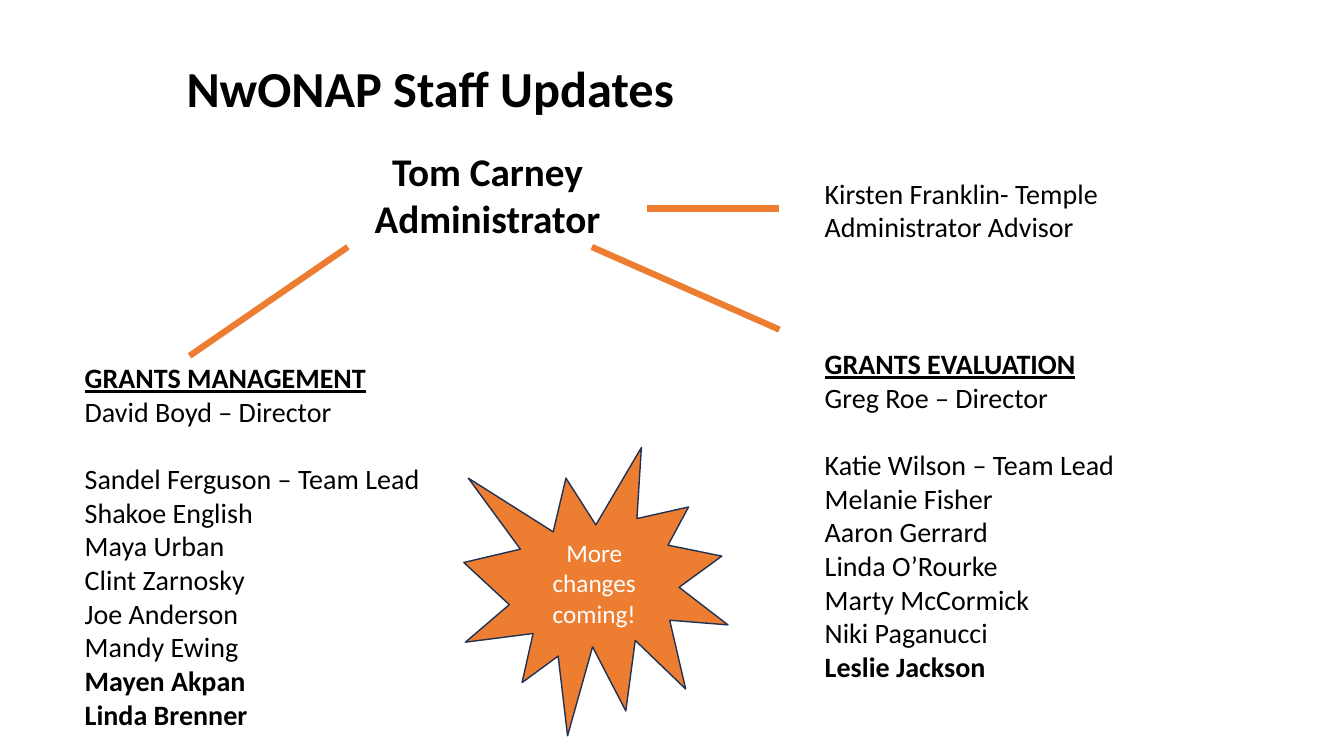
from lxml.etree import SubElement
from pptx import Presentation
from pptx.dml.color import RGBColor
from pptx.enum.shapes import MSO_CONNECTOR, MSO_SHAPE
from pptx.enum.text import MSO_ANCHOR, MSO_AUTO_SIZE, PP_ALIGN
from pptx.oxml.ns import qn
from pptx.util import Pt

PX = 9144  # 100 px to the inch
FONT = "Calibri"
BLACK = RGBColor(0, 0, 0)
WHITE = RGBColor(255, 255, 255)
ORANGE = RGBColor(0xED, 0x7D, 0x31)
NAVY = RGBColor(0x1E, 0x32, 0x56)

TITLE = (175, 52, 511, 71)
BOSS = (360, 141, 247, 104)
AIDE = (808, 170, 294, 77)
LEFT = (74, 353, 355, 380)
RIGHT = (808, 339, 310, 347)
BURST = (460, 444, 262, 286)
LINKS = [(345, 245, 188, 353), (587, 245, 773, 327), (642, 207, 773, 207)]

# Each team: heading, director, staff, newly joined staff
GRANTS = ("GRANTS MANAGEMENT", "David Boyd – Director",
          ["Sandel Ferguson – Team Lead", "Shakoe English", "Maya Urban",
           "Clint Zarnosky", "Joe Anderson", "Mandy Ewing"],
          ["Mayen Akpan", "Linda Brenner"])
REVIEW = ("GRANTS EVALUATION", "Greg Roe – Director",
          ["Katie Wilson – Team Lead", "Melanie Fisher", "Aaron Gerrard",
           "Linda O’Rourke", "Marty McCormick", "Niki Paganucci"],
          ["Leslie Jackson"])


def scale(box):
    return [v * PX for v in box]


def place(shape, box):
    shape.left, shape.top, shape.width, shape.height = scale(box)


def write(shape, text, size, bold=False, color=BLACK,
          align=PP_ALIGN.LEFT, anchor=MSO_ANCHOR.TOP):
    frame = shape.text_frame
    frame.text = text
    frame.word_wrap = True
    frame.auto_size = MSO_AUTO_SIZE.NONE
    frame.vertical_anchor = anchor
    for para in frame.paragraphs:
        para.alignment = align
        para.space_before = Pt(0)
        for run in para.runs:
            font = run.font
            font.name, font.size, font.bold = FONT, Pt(size), bold
            font.color.rgb = color
    return frame.paragraphs


def add_label(slide, box, text, size, **style):
    write(slide.shapes.add_textbox(*scale(box)), text, size, **style)


def add_team(holder, box, team):
    head, chief, staff, fresh = team
    place(holder, box)
    paras = write(holder, "\n".join([head, chief, *staff, *fresh]), 20)
    for para in paras:
        props = para._p.get_or_add_pPr()
        props.set("marL", "0")
        props.set("indent", "0")
        SubElement(props, qn("a:buNone"))
    paras[0].runs[0].font.underline = True
    paras[1].space_after = Pt(24)
    for para in (paras[0], *paras[-len(fresh):]):
        para.runs[0].font.bold = True


def add_link(slide, ends):
    link = slide.shapes.add_connector(MSO_CONNECTOR.STRAIGHT, *scale(ends))
    link.line.color.rgb = ORANGE
    link.line.width = Pt(4.5)
    SubElement(link._element.spPr, qn("a:effectLst"))


def add_burst(slide, box, text):
    burst = slide.shapes.add_shape(MSO_SHAPE.EXPLOSION1, *scale(box))
    burst.shadow.inherit = False
    burst.fill.solid()
    burst.fill.fore_color.rgb = ORANGE
    burst.line.color.rgb = NAVY
    burst.line.width = Pt(1)
    write(burst, text, 18, color=WHITE, align=PP_ALIGN.CENTER,
          anchor=MSO_ANCHOR.MIDDLE)


def add_chart_slide(deck):
    slide = deck.slides.add_slide(deck.slide_layouts[3])

    # Title
    title = slide.shapes.title
    place(title, TITLE)
    write(title, "NwONAP Staff Updates", 36, bold=True)

    # Leadership
    add_label(slide, BOSS, "Tom Carney\nAdministrator", 28, bold=True,
              align=PP_ALIGN.CENTER)
    add_label(slide, AIDE, "Kirsten Franklin- Temple\nAdministrator Advisor", 20)

    # Teams
    add_team(slide.placeholders[1], LEFT, GRANTS)
    add_team(slide.placeholders[2], RIGHT, REVIEW)

    # Links and notice
    for ends in LINKS:
        add_link(slide, ends)
    add_burst(slide, BURST, "More changes coming!")


def main():
    deck = Presentation()
    deck.slide_width, deck.slide_height = scale((1333, 750))
    add_chart_slide(deck)
    deck.save("out.pptx")


if __name__ == "__main__":
    main()
